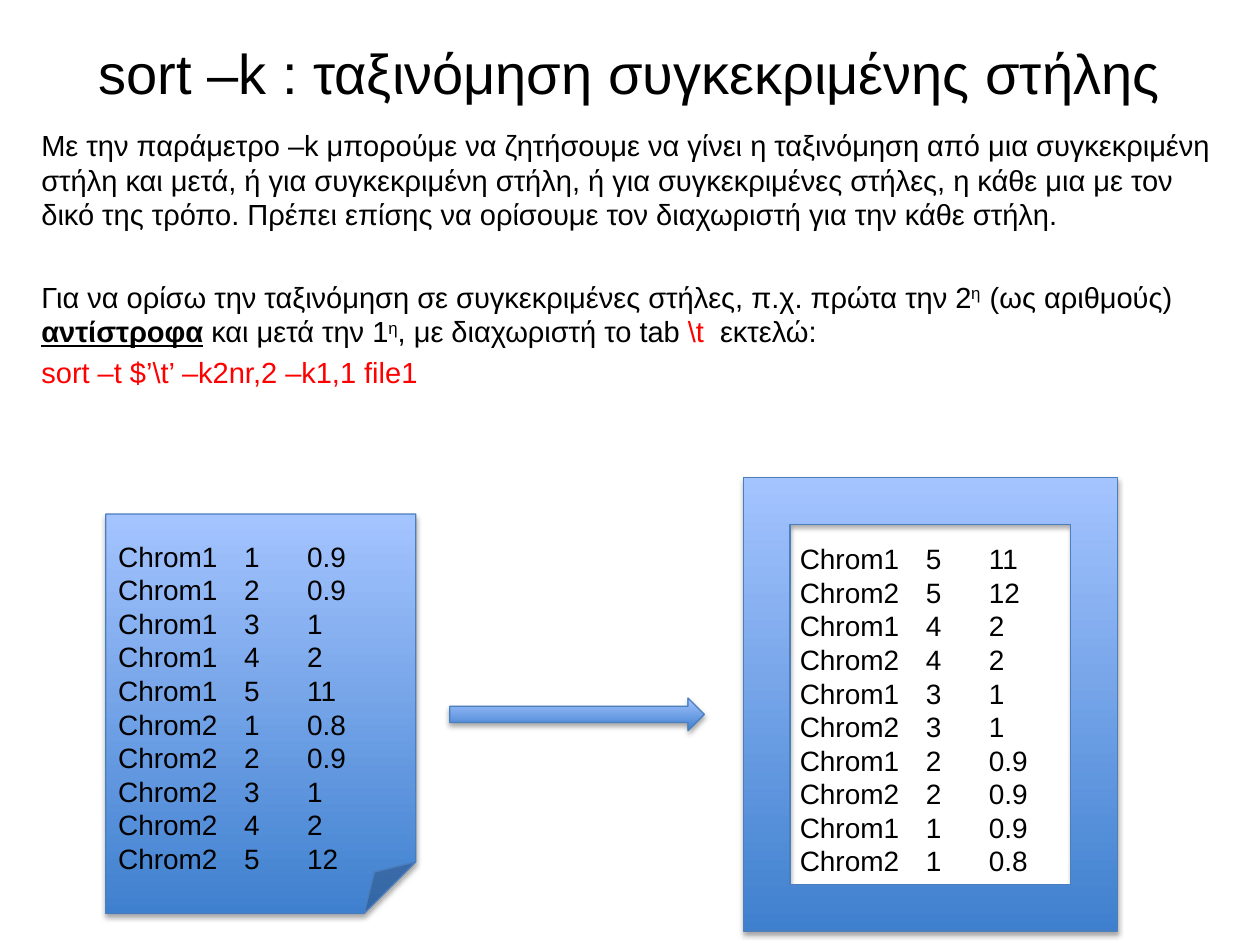
from lxml.etree import SubElement
from pptx import Presentation
from pptx.dml.color import RGBColor
from pptx.enum.shapes import MSO_SHAPE as Preset
from pptx.enum.text import MSO_ANCHOR as Anchor, PP_ALIGN as Align
from pptx.oxml.ns import qn
from pptx.util import Inches, Pt

BLACK = RGBColor(0x00, 0x00, 0x00)
RED = RGBColor(0xFF, 0x00, 0x00)
DEEP_BLUE = RGBColor(0x3F, 0x80, 0xCE)
PALE_BLUE = RGBColor(0xA4, 0xC4, 0xFF)
OUTLINE = RGBColor(0x4B, 0x7E, 0xBC)

# Content: a run is its text and the format values that differ
SUPER = {"baseline": 30000}
TITLE = "sort –k : ταξινόμηση συγκεκριμένης στήλης"
EXPLANATION = [  # space before in points, runs
    (0, [("Με την παράμετρο –k μπορούμε να ζητήσουμε να γίνει η ταξινόμηση από μια "
          "συγκεκριμένη στήλη και μετά, ή για συγκεκριμένη στήλη, ή για συγκεκριμένες "
          "στήλες, η κάθε μια με τον δικό της τρόπο. Πρέπει επίσης να ορίσουμε τον "
          "διαχωριστή για την κάθε στήλη.", {})]),
    (27, [("Για να ορίσω την ταξινόμηση σε συγκεκριμένες στήλες, π.χ. πρώτα την 2", {}),
          ("η  ", SUPER),
          ("(ως αριθμούς) ", {}),
          ("αντίστροφα", {"bold": True, "underline": True}),
          (" και μετά την 1", {}),
          ("η", SUPER),
          (", με διαχωριστή το tab ", {}),
          ("\\t  ", {"color": RED}),
          ("εκτελώ:", {})]),
    (3.3, [("sort –t $’\\t’ –k2nr,2 –k1,1 file1", {"color": RED})]),
]
FILE_ROWS = [
    ("Chrom1", 1, "0.9"), ("Chrom1", 2, "0.9"), ("Chrom1", 3, "1"),
    ("Chrom1", 4, "2"), ("Chrom1", 5, "11"), ("Chrom2", 1, "0.8"),
    ("Chrom2", 2, "0.9"), ("Chrom2", 3, "1"), ("Chrom2", 4, "2"),
    ("Chrom2", 5, "12"),
]
# The command's own rule: second column descending, then first ascending
SORTED_ROWS = sorted(FILE_ROWS, key=lambda row: (-row[1], row[0]))
COLUMN_STOPS = (1, 1.5)

prs = Presentation()
prs.slide_width, prs.slide_height = Inches(10), Inches(7.5)
slide = prs.slides.add_slide(prs.slide_layouts[6])


def add_run(paragraph, text, size, color=BLACK, baseline=None, **formats):
    run = paragraph.add_run()
    run.text = text
    run.font.color.rgb = color
    for name, value in {"name": "Arial", "size": Pt(size), **formats}.items():
        setattr(run.font, name, value)
    if baseline:
        run.font._element.set("baseline", str(baseline))


def add_box(*place):
    box = slide.shapes.add_textbox(*map(Inches, place))
    box.text_frame.word_wrap = True
    return box.text_frame


def next_paragraph(frame, index):
    return frame.add_paragraph() if index else frame.paragraphs[0]


def write_rows(frame, rows):
    for index, row in enumerate(rows):
        paragraph = next_paragraph(frame, index)
        paragraph.alignment = Align.LEFT
        stops = SubElement(paragraph._p.get_or_add_pPr(), qn("a:tabLst"))
        for stop in COLUMN_STOPS:
            SubElement(stops, qn("a:tab"), pos=str(Inches(stop)), algn="l")
        add_run(paragraph, "\t".join(map(str, row)), 16)


def add_blue_shape(preset, *place):
    shape = slide.shapes.add_shape(preset, *map(Inches, place))
    shape.fill.gradient()
    shape.fill.gradient_angle = 90
    for stop, color in zip(shape.fill.gradient_stops, (DEEP_BLUE, PALE_BLUE)):
        stop.color.rgb = color
    for stop, position in zip(shape.fill.gradient_stops, (0, 1)):
        stop.position = position
    shape.line.color.rgb = OUTLINE
    shape.line.width = Pt(0.75)
    # Soft shadow straight below
    shape.shadow.inherit = False
    effects = shape._element.spPr.find(qn("a:effectLst"))
    shadow = SubElement(effects, qn("a:outerShdw"), blurRad=str(Pt(3.1)),
                        dist=str(Pt(1.8)), dir="5400000", rotWithShape="0")
    black = SubElement(shadow, qn("a:srgbClr"), val=str(BLACK))
    SubElement(black, qn("a:alpha"), val="35000")
    return shape


# Title
title = add_box(0.5, 0.3, 9, 0.54)
title.vertical_anchor = Anchor.MIDDLE
title.paragraphs[0].alignment = Align.CENTER
add_run(title.paragraphs[0], TITLE, 32)

# Explanation and command
explanation = add_box(0.23, 0.96, 9.59, 2.53)
for index, (space, runs) in enumerate(EXPLANATION):
    paragraph = next_paragraph(explanation, index)
    paragraph.space_before = Pt(space)
    for text, formats in runs:
        add_run(paragraph, text, 16.6, **formats)

# Input file
input_file = add_blue_shape(Preset.FOLDED_CORNER, 0.84, 4.08, 2.46, 3.17).text_frame
input_file.vertical_anchor = Anchor.TOP
input_file.margin_top = Inches(0.2)
input_file.margin_bottom = 0
write_rows(input_file, FILE_ROWS)

# Sorted output in its frame, and the arrow to it
add_blue_shape(Preset.FRAME, 5.9, 3.79, 2.97, 3.6)
add_blue_shape(Preset.RIGHT_ARROW, 3.57, 5.54, 2.02, 0.26)
write_rows(add_box(6.25, 4.25, 2.26, 2.79), SORTED_ROWS)

prs.save("out.pptx")
